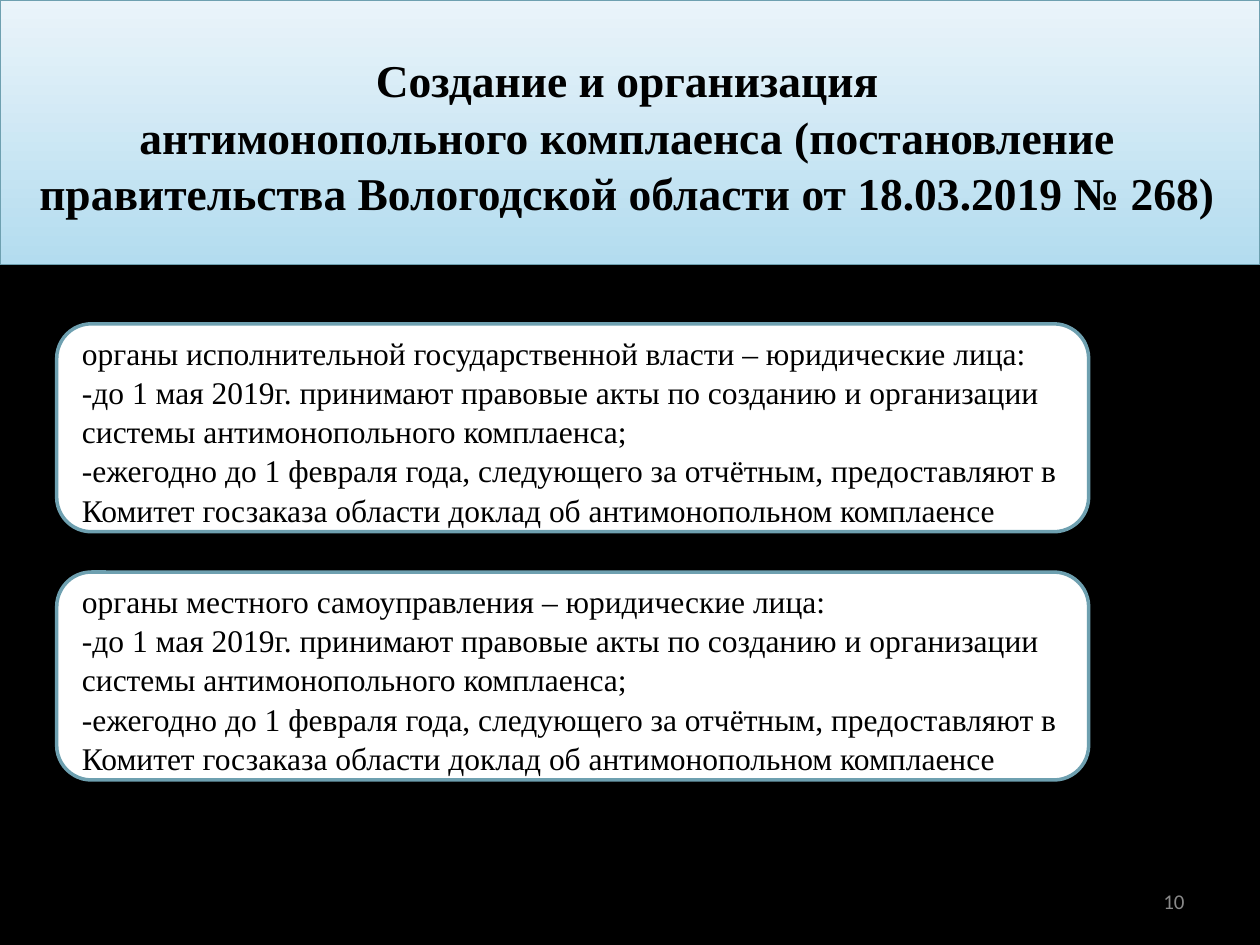
from copy import deepcopy
from dataclasses import dataclass

from pptx import Presentation
from pptx.dml.color import RGBColor
from pptx.enum.shapes import MSO_SHAPE
from pptx.enum.text import MSO_ANCHOR, MSO_AUTO_SIZE, PP_ALIGN
from pptx.oxml.ns import qn
from pptx.slide import Slide
from pptx.text.text import TextFrame
from pptx.util import Inches, Pt


@dataclass(frozen=True)
class Theme:
    background: RGBColor = RGBColor(0, 0, 0)
    ink: RGBColor = RGBColor(0, 0, 0)
    muted: RGBColor = RGBColor(0x89, 0x89, 0x89)
    card: RGBColor = RGBColor(0xFF, 0xFF, 0xFF)
    border: RGBColor = RGBColor(0x6E, 0xA0, 0xB0)
    banner_top: RGBColor = RGBColor(0xEA, 0xF4, 0xFA)
    banner_bottom: RGBColor = RGBColor(0xB3, 0xDC, 0xEF)
    serif: str = "Times New Roman"
    sans: str = "Calibri"
    title_size: Pt = Pt(26)
    body_size: Pt = Pt(18)
    number_size: Pt = Pt(12)


@dataclass(frozen=True)
class Duty:
    authority: str
    tasks: tuple[str, ...]


THEME = Theme()
TITLE = (
    "Создание и организация\nантимонопольного комплаенса (постановление "
    "правительства Вологодской области от 18.03.2019 № 268)"
)
TASKS = (
    "-до 1 мая 2019г. принимают правовые акты по созданию и организации "
    "системы антимонопольного комплаенса;",
    "-ежегодно до 1 февраля года, следующего за отчётным, предоставляют в "
    "Комитет госзаказа области доклад об антимонопольном комплаенсе",
)
DUTIES = (
    Duty("органы исполнительной государственной власти – юридические лица:", TASKS),
    Duty("органы местного самоуправления – юридические лица:", TASKS),
)
CARD_TOP, CARD_PITCH = 2.57, 1.97
FRAME_FORMAT = {
    "word_wrap": True,
    "auto_size": MSO_AUTO_SIZE.NONE,
    "vertical_anchor": MSO_ANCHOR.MIDDLE,
}
INSETS = {
    "margin_left": Inches(0.12),
    "margin_top": Inches(0.12),
    "margin_right": Inches(0.16),
    "margin_bottom": Inches(0.08),
}
SERIF_FONT = {"name": THEME.serif, "bold": False, "size": THEME.body_size}
TITLE_FONT = {"name": THEME.serif, "bold": True, "size": THEME.title_size}
NUMBER_FONT = {"name": THEME.sans, "bold": False, "size": THEME.number_size}


def apply(target: object, values: dict) -> None:
    """Set each named attribute on the target."""
    for attribute, value in values.items():
        setattr(target, attribute, value)


def write(
    frame: TextFrame, lines: tuple[str, ...], font: dict, color: RGBColor, layout: dict
) -> None:
    """Fill a text frame with evenly formatted paragraphs."""
    apply(frame, FRAME_FORMAT)
    for index, line in enumerate(lines):
        paragraph = frame.add_paragraph() if index else frame.paragraphs[0]
        paragraph.text = line
        apply(paragraph, layout)
        for run in paragraph.runs:
            apply(run.font, font)
            run.font.color.rgb = color
        for line_break in paragraph._p.findall(qn("a:br")):
            line_break.insert(0, deepcopy(paragraph.runs[0].font._element))


def add_banner(slide: Slide) -> None:
    """Place the title on a full-width gradient band."""
    banner = slide.shapes.title
    apply(banner, {"left": 0, "top": 0, "width": Inches(10), "height": Inches(2.1)})
    banner.fill.gradient()
    banner.fill.gradient_angle = 270
    for stop, color in zip(
        banner.fill.gradient_stops, (THEME.banner_top, THEME.banner_bottom)
    ):
        stop.color.rgb = color
    banner.line.color.rgb = THEME.border
    banner.line.width = Pt(0.75)
    apply(banner.text_frame, INSETS)
    layout = {"alignment": PP_ALIGN.CENTER, "line_spacing": 1.04}
    write(banner.text_frame, (TITLE,), TITLE_FONT, THEME.ink, layout)


def add_duty(slide: Slide, duty: Duty, top: float) -> None:
    """Draw one rounded card with an authority and its tasks."""
    card = slide.shapes.add_shape(
        MSO_SHAPE.ROUNDED_RECTANGLE,
        Inches(0.45), Inches(top), Inches(8.19), Inches(1.65),
    )
    card.shadow.inherit = False
    card.fill.solid()
    card.fill.fore_color.rgb = THEME.card
    card.line.color.rgb = THEME.border
    card.line.width = Pt(2)
    apply(card.text_frame, INSETS)
    layout = {"alignment": PP_ALIGN.LEFT, "line_spacing": 1.04}
    write(card.text_frame, (duty.authority, *duty.tasks), SERIF_FONT, THEME.ink, layout)


def add_page_number(slide: Slide, number: str) -> None:
    """Write the page number in the lower right corner."""
    corner = slide.shapes.add_textbox(
        Inches(7.17), Inches(6.95), Inches(2.33), Inches(0.4)
    )
    layout = {"alignment": PP_ALIGN.RIGHT}
    write(corner.text_frame, (number,), NUMBER_FONT, THEME.muted, layout)


def main() -> None:
    """Build and save the slide."""
    deck = Presentation()
    apply(deck, {"slide_width": Inches(10), "slide_height": Inches(7.5)})
    slide = deck.slides.add_slide(deck.slide_layouts[5])
    slide.background.fill.solid()
    slide.background.fill.fore_color.rgb = THEME.background
    add_page_number(slide, "10")
    add_banner(slide)
    for index, duty in enumerate(DUTIES):
        add_duty(slide, duty, CARD_TOP + index * CARD_PITCH)
    deck.save("out.pptx")


if __name__ == "__main__":
    main()
